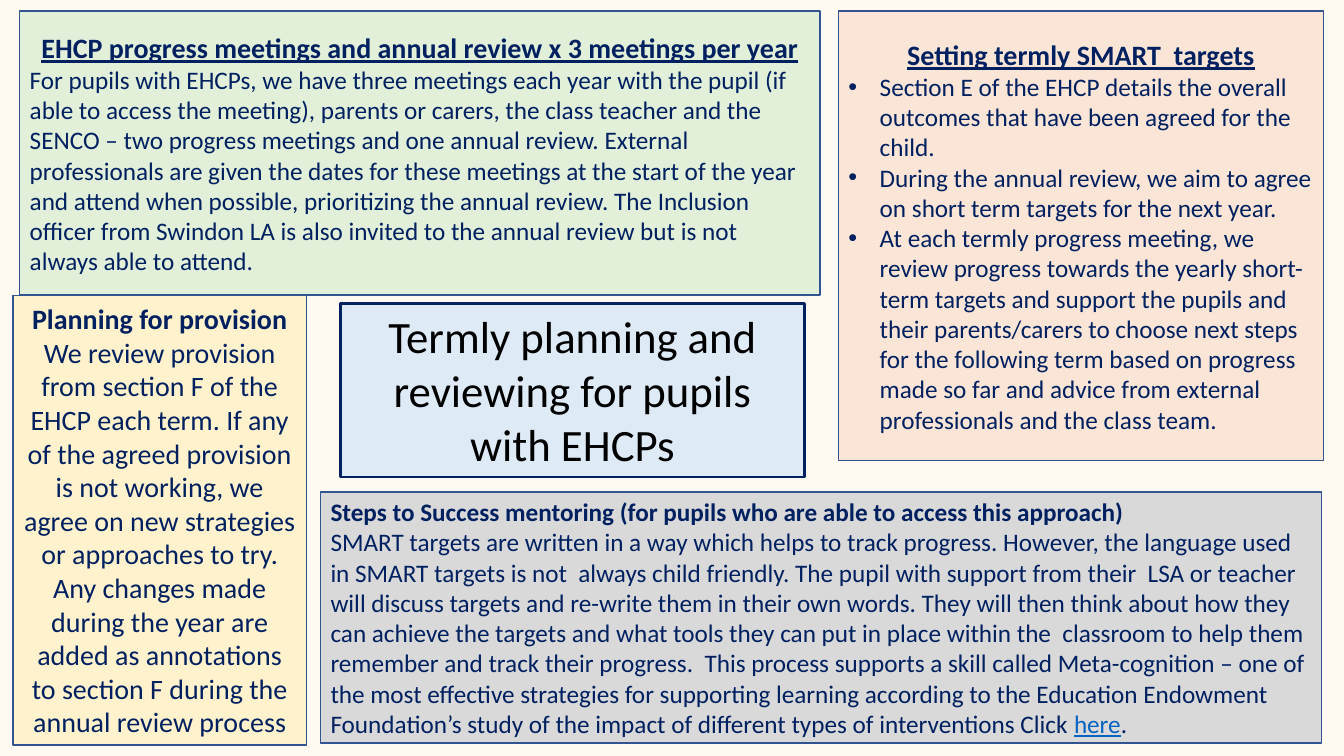
from lxml.etree import SubElement
from pptx import Presentation
from pptx.dml.color import RGBColor
from pptx.enum.shapes import MSO_SHAPE
from pptx.enum.text import MSO_ANCHOR, MSO_AUTO_SIZE, PP_ALIGN
from pptx.oxml.ns import qn
from pptx.util import Cm, Pt

NAVY = RGBColor(0x00, 0x20, 0x60)
EDGE = RGBColor(0x32, 0x54, 0x91)
LINK = RGBColor(0x05, 0x63, 0xC1)
BLACK = RGBColor(0x00, 0x00, 0x00)
CREAM = RGBColor(0xFF, 0xFA, 0xF1)
GREEN = RGBColor(0xE2, 0xF0, 0xD9)
PEACH = RGBColor(0xFB, 0xE5, 0xD6)
GREY = RGBColor(0xD9, 0xD9, 0xD9)
YELLOW = RGBColor(0xFF, 0xF2, 0xCC)
BLUE = RGBColor(0xDE, 0xEB, 0xF7)

LEFT, MID = PP_ALIGN.LEFT, PP_ALIGN.CENTER
TITLE = "Termly planning and reviewing for pupils with EHCPs"
TITLE_AT = (8.58, 7.65, 11.7, 4.37)

PANELS = [
    dict(
        at=(0.5, 0.28, 20.17, 7.16), fill=GREEN, size=18,
        head=("EHCP progress meetings and annual review x 3 meetings per year", 20, MID, True),
        body=["For pupils with EHCPs, we have three meetings each year with the pupil (if able to access the meeting), parents or carers, the class teacher and the SENCO – two progress meetings and one annual review. External professionals are given the dates for these meetings at the start of the year and attend when possible, prioritizing the annual review. The Inclusion officer from Swindon LA is also invited to the annual review but is not always able to attend."],
    ),
    dict(
        at=(21.13, 0.28, 12.22, 11.33), fill=PEACH, size=18, list=True,
        head=("Setting termly SMART  targets", 20, MID, True),
        body=[
            "Section E of the EHCP details the overall outcomes that have been agreed for the child.",
            "During the annual review, we aim to agree on short term targets for the next year.",
            "At each termly progress meeting, we review progress towards the yearly short-term targets and support the pupils and their parents/carers to choose next steps for the following term based on progress made so far and advice from external professionals and the class team.",
        ],
    ),
    dict(
        at=(8.08, 12.4, 25.22, 6.32), fill=GREY, size=18, link=("here", "."),
        head=("Steps to Success mentoring (for pupils who are able to access this approach)", 18, LEFT, False),
        body=["SMART targets are written in a way which helps to track progress. However, the language used in SMART targets is not  always child friendly. The pupil with support from their  LSA or teacher will discuss targets and re-write them in their own words. They will then think about how they can achieve the targets and what tools they can put in place within the  classroom to help them remember and track their progress.  This process supports a skill called Meta-cognition – one of the most effective strategies for supporting learning according to the Education Endowment Foundation’s study of the impact of different types of interventions Click "],
    ),
    dict(
        at=(0.33, 7.44, 7.39, 11.33), fill=YELLOW, size=20, align=MID,
        head=("Planning for provision", 20, MID, False),
        body=["We review provision from section F of the EHCP each term. If any of the agreed provision is not working, we agree on new strategies or approaches to try. Any changes made during the year are added as annotations to section F during the annual review process"],
    ),
]


def place(shape, at, fill, edge, width, anchor):
    shape.left, shape.top, shape.width, shape.height = map(Cm, at)
    shape.fill.solid()
    shape.fill.fore_color.rgb = fill
    shape.line.color.rgb = edge
    shape.line.width = Pt(width)
    frame = shape.text_frame
    frame.word_wrap = True
    frame.auto_size = MSO_AUTO_SIZE.NONE
    frame.vertical_anchor = anchor
    frame.margin_left = frame.margin_right = Cm(0.25)
    frame.margin_top = frame.margin_bottom = Cm(0.13)
    return frame


def write(para, text, size, align, color=NAVY, bold=False, under=False, bullet=False):
    para.add_run().text = text
    props = para._p.get_or_add_pPr()
    dent = Cm(0.79) if bullet else 0
    props.set("marL", str(dent))
    props.set("indent", str(-dent))
    if bullet:
        SubElement(props, qn("a:buFont"), typeface="Arial")
        SubElement(props, qn("a:buChar"), char="•")
    else:
        SubElement(props, qn("a:buNone"))
    para.alignment = align
    para.line_spacing = 1.0
    para.space_before = para.space_after = Pt(0)
    font = para.font
    font.name, font.size = "Calibri", Pt(size)
    font.bold, font.underline = bold, under
    font.color.rgb = color


def add_panel(slide, panel):
    bullet = panel.get("list", False)
    if bullet:
        shape = slide.placeholders[1]
    else:
        shape = slide.shapes.add_shape(MSO_SHAPE.RECTANGLE, 0, 0, 0, 0)
        shape.shadow.inherit = False
    frame = place(shape, panel["at"], panel["fill"], EDGE, 1, MSO_ANCHOR.MIDDLE)
    text, size, align, under = panel["head"]
    write(frame.paragraphs[0], text, size, align, bold=True, under=under)
    for text in panel["body"]:
        para = frame.add_paragraph()
        write(para, text, panel["size"], panel.get("align", LEFT), bullet=bullet)
    if "link" in panel:
        word, stop = panel["link"]
        run = para.add_run()
        run.text = word
        run.font.color.rgb = LINK
        run.font.underline = True
        para.add_run().text = stop


def main():
    deck = Presentation()
    deck.slide_width, deck.slide_height = Cm(33.87), Cm(19.05)
    slide = deck.slides.add_slide(deck.slide_layouts[1])
    slide.background.fill.solid()
    slide.background.fill.fore_color.rgb = CREAM
    for panel in PANELS:
        add_panel(slide, panel)
    frame = place(slide.shapes.title, TITLE_AT, BLUE, NAVY, 1.75, MSO_ANCHOR.TOP)
    write(frame.paragraphs[0], TITLE, 32, MID, color=BLACK)
    deck.save("out.pptx")


if __name__ == "__main__":
    main()
